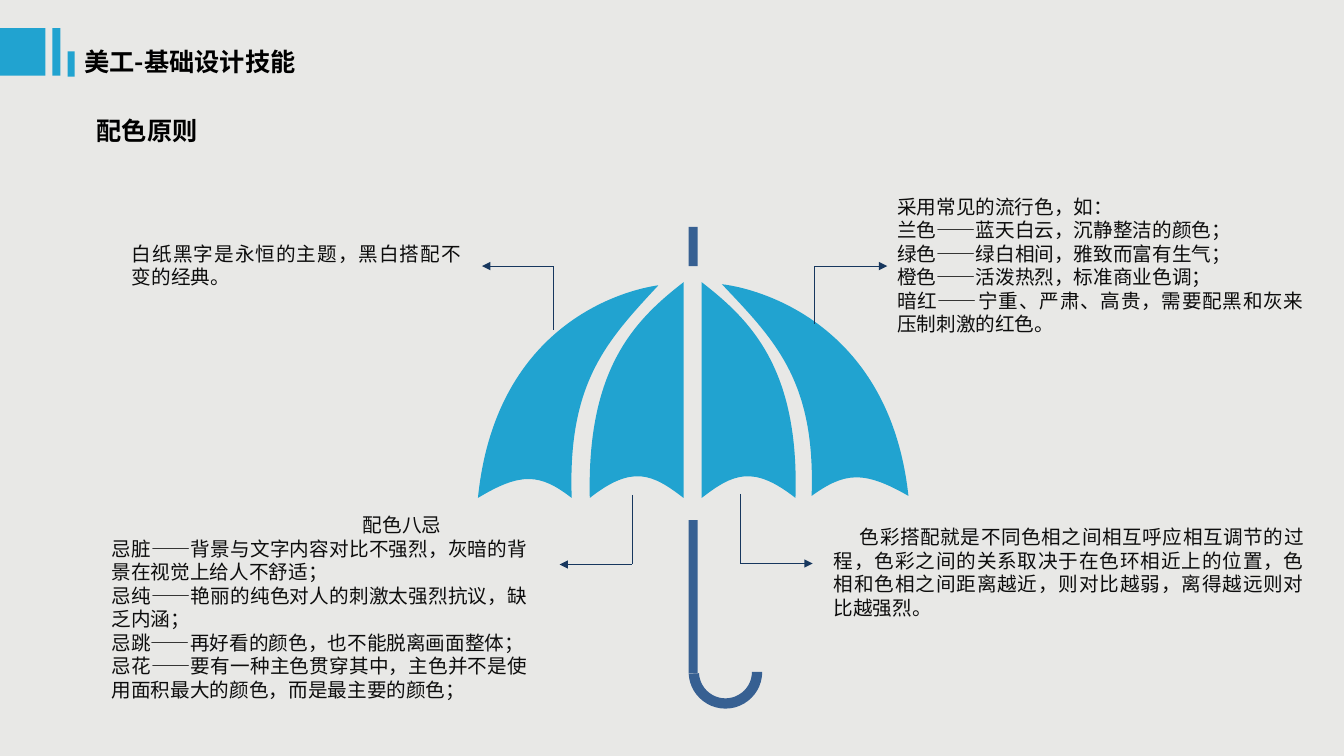
from pptx import Presentation
from pptx.dml.color import RGBColor
from pptx.enum.shapes import MSO_CONNECTOR, MSO_SHAPE
from pptx.enum.text import PP_ALIGN
from pptx.oxml.ns import qn
from pptx.util import Pt
from lxml import etree

PX = 9144  # 100 px to the inch
RECT, ARC = MSO_SHAPE.RECTANGLE, MSO_SHAPE.BLOCK_ARC
STRAIGHT = MSO_CONNECTOR.STRAIGHT
LEFT, JUSTIFY = PP_ALIGN.LEFT, PP_ALIGN.JUSTIFY
FONT = "Noto Sans CJK SC"
CYAN, BLUE, NAVY = "21A3D0", "376092", "17375E"
BLACK, INK, PAPER = "000000", "0D0D0D", "E8E8E6"

# Each panel: start point, then Bezier curves as three points;
# a single point is a straight edge.
PANELS = [
    ((567, 494), [[(563, 380), (601, 339), (653, 283)],
                  [(612, 289), (491, 326), (474, 494)],
                  [(517, 468), (536, 470), (567, 494)]]),
    ((678, 494), [[(678, 280)],
                  [(629, 318), (582, 366), (585, 494)],
                  [(627, 461), (647, 470), (678, 494)]]),
    ((696, 494), [[(696, 280)],
                  [(745, 318), (793, 366), (789, 494)],
                  [(747, 461), (727, 470), (696, 494)]]),
    ((805, 492), [[(809, 378), (769, 338), (716, 282)],
                  [(758, 287), (883, 325), (901, 492)],
                  [(856, 466), (837, 469), (805, 492)]]),
]

# Riser x, riser start y, bend y, arrow tip x
ARROWS = [(549, 327, 264, 478), (627, 491, 560, 555),
          (808, 321, 264, 880), (734, 490, 559, 806)]

BARS = [(0, 28, 45, 47), (52, 28, 8, 47), (67, 51, 7, 25)]

# Box, indent of the first line, paragraphs
NOTES = [
    ((817, 516, 486, 104), 26, [
        "色彩搭配就是不同色相之间相互呼应相互调节的过程，色彩之间的关系取决于在色环相近上的位置，"
        "色相和色相之间距离越近，则对比越弱，离得越远则对比越强烈。"]),
    ((101, 504, 432, 198), 249, [
        "配色八忌",
        "忌脏——背景与文字内容对比不强烈，灰暗的背景在视觉上给人不舒适；",
        "忌纯——艳丽的纯色对人的刺激太强烈抗议，缺乏内涵；",
        "忌跳——再好看的颜色，也不能脱离画面整体；",
        "忌花——要有一种主色贯穿其中，主色并不是使用面积最大的颜色，而是最主要的颜色；"]),
    ((121, 235, 346, 57), 0, ["白纸黑字是永恒的主题，黑白搭配不变的经典。"]),
    ((880, 188, 423, 151), 0, [
        "采用常见的流行色，如：",
        "兰色——蓝天白云，沉静整洁的颜色；",
        "绿色——绿白相间，雅致而富有生气；",
        "橙色——活泼热烈，标准商业色调；",
        "暗红——宁重、严肃、高贵，需要配黑和灰来压制刺激的红色。"]),
]


def color(code):
    return RGBColor.from_string(code)


def emu(nums):
    return [n * PX for n in nums]


def paint(shape, code):
    shape.shadow.inherit = False
    shape.fill.solid()
    shape.fill.fore_color.rgb = color(code)
    shape.line.fill.background()


def block(slide, box, code, kind=RECT):
    shape = slide.shapes.add_shape(kind, *emu(box))
    paint(shape, code)
    return shape


def panel(slide, start, edges):
    form = slide.shapes.build_freeform(*start, scale=PX)
    form.add_line_segments([edge[-1] for edge in edges], close=True)
    shape = form.convert_to_shape()
    paint(shape, CYAN)
    # Turn the straight edges into curves where control points are given
    left, top = shape.left // PX, shape.top // PX
    sides = list(shape._element.iter(qn("a:lnTo")))
    for side, edge in zip(sides, edges):
        if len(edge) == 1:
            continue
        side.tag = qn("a:cubicBezTo")
        side.remove(side[0])
        for x, y in edge:
            dot = etree.SubElement(side, qn("a:pt"))
            dot.set("x", str(x - left))
            dot.set("y", str(y - top))


def line(slide, ends, head=False):
    link = slide.shapes.add_connector(STRAIGHT, *emu(ends))
    link.line.color.rgb = color(NAVY)
    link.line.width = Pt(0.75)
    if head:
        tip = etree.SubElement(link.line._get_or_add_ln(), qn("a:tailEnd"))
        tip.set("type", "triangle")
    etree.SubElement(link._element.spPr, qn("a:effectLst"))


def arrow(slide, x, start, turn, tip):
    line(slide, (x, start, x, turn))
    line(slide, (x, turn, tip, turn), head=True)


def text(slide, box, paras, size, code, bold=False, align=LEFT, indent=0):
    frame = slide.shapes.add_textbox(*emu(box)).text_frame
    frame.word_wrap = True
    frame.text = "\n".join(paras)
    for para in frame.paragraphs:
        para.alignment = align
        para.line_spacing = Pt(size * 1.2)
        for run in para.runs:
            font = run.font
            font.size, font.bold, font.name = Pt(size), bold, FONT
            font.color.rgb = color(code)
            east = etree.SubElement(run._r.get_or_add_rPr(), qn("a:ea"))
            east.set("typeface", FONT)
    if indent:
        first = frame.paragraphs[0]._p.get_or_add_pPr()
        first.set("indent", str(indent * PX))


def main():
    deck = Presentation()
    deck.slide_width, deck.slide_height = emu((1333, 750))
    slide = deck.slides.add_slide(deck.slide_layouts[6])
    slide.background.fill.solid()
    slide.background.fill.fore_color.rgb = color(PAPER)

    # Umbrella
    for start, edges in PANELS:
        panel(slide, start, edges)
    block(slide, (683, 225, 9, 39), BLUE)
    block(slide, (683, 516, 9, 152), BLUE)
    hook = block(slide, (683, 630, 73, 73), BLUE, ARC)
    hook.rotation = 180
    for i, value in enumerate((108, 214.22, 0.14)):
        hook.adjustments[i] = value

    # Arrows and notes
    for spot in ARROWS:
        arrow(slide, *spot)
    for box, indent, paras in NOTES:
        text(slide, box, paras, 14, INK, align=JUSTIFY, indent=indent)

    # Heading
    for bar in BARS:
        block(slide, bar, CYAN)
    text(slide, (74, 41, 271, 40), ["美工-基础设计技能"], 18, BLACK, bold=True)
    text(slide, (86, 109, 348, 40), ["配色原则"], 18, BLACK, bold=True)

    deck.save("out.pptx")


if __name__ == "__main__":
    main()
